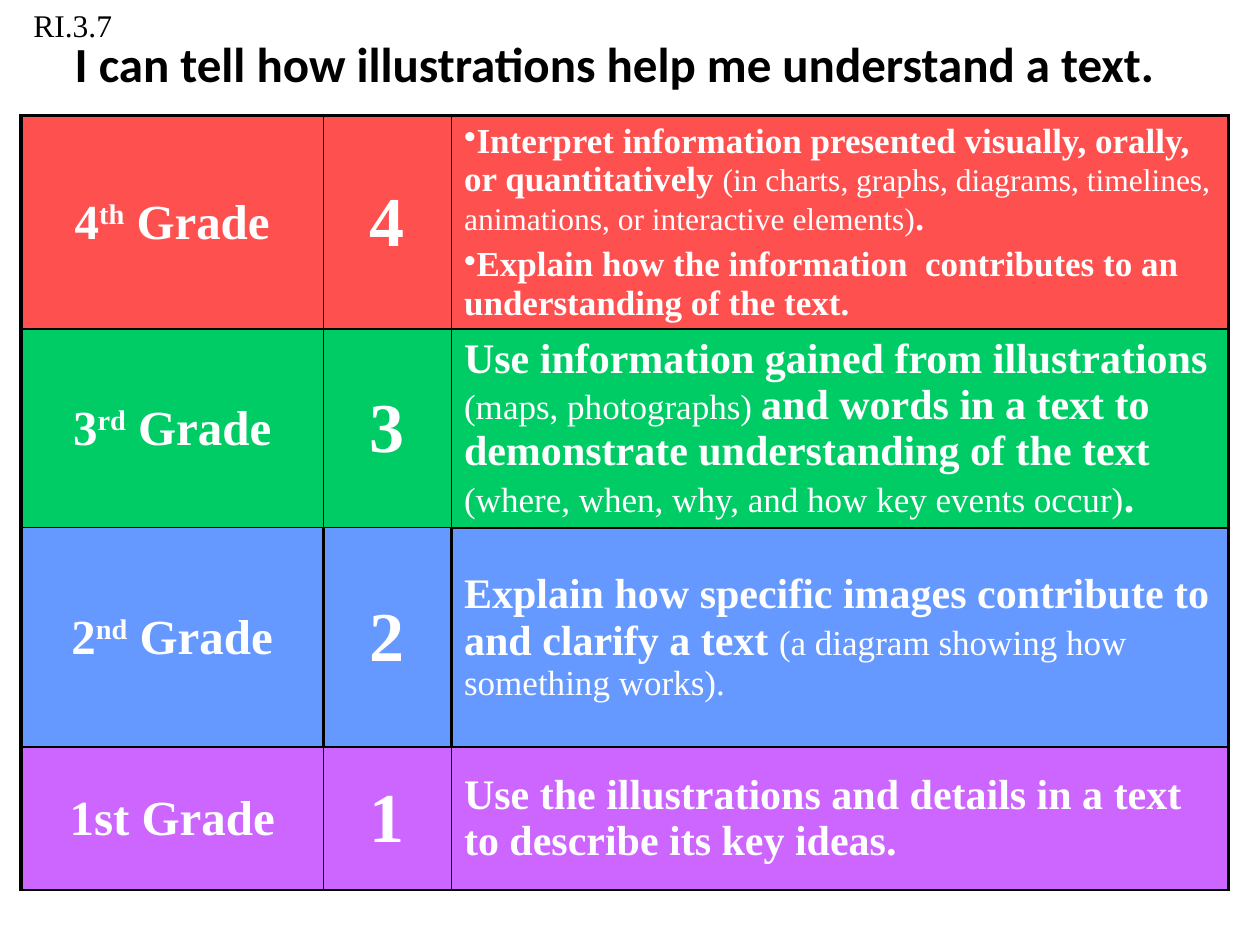
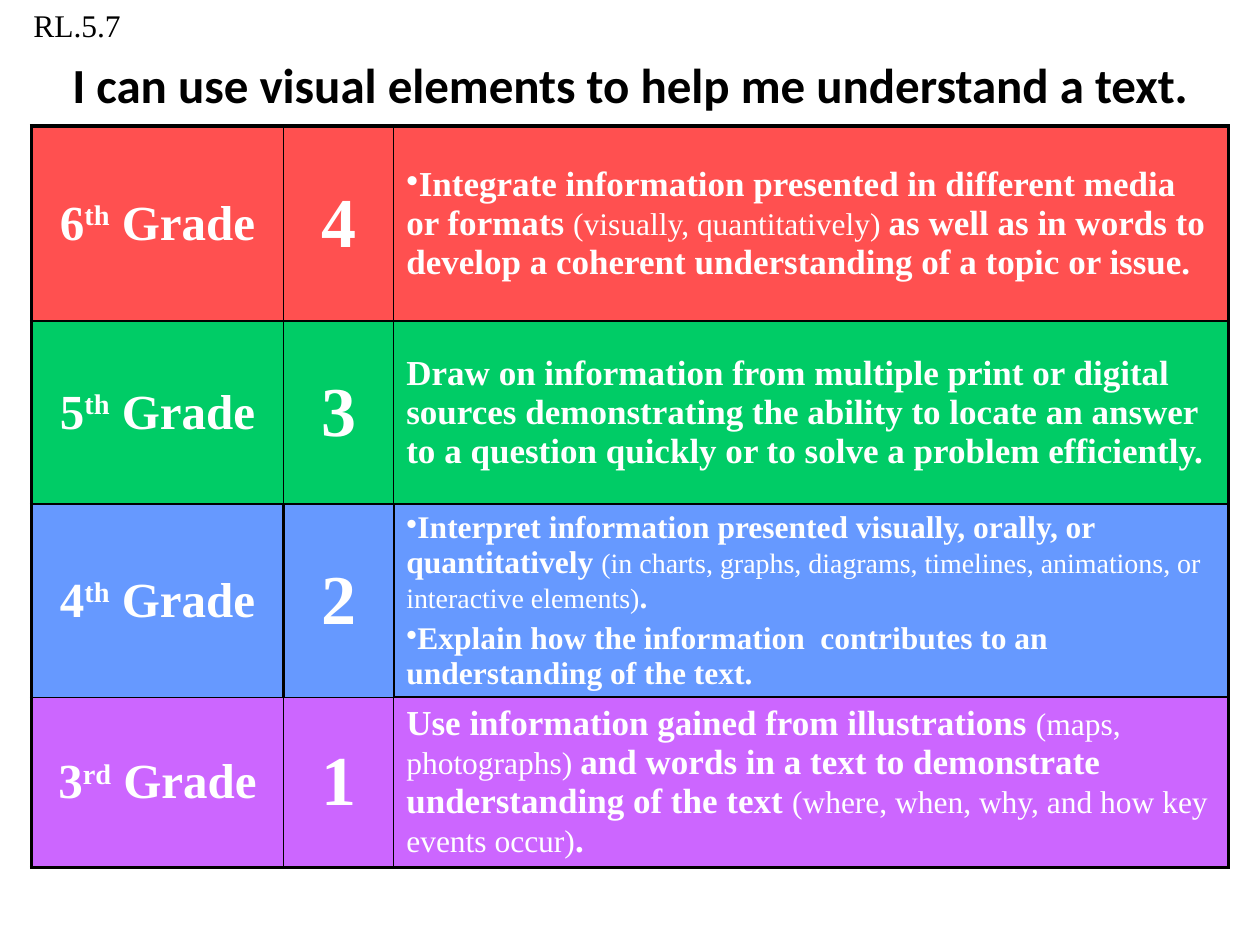
from lxml.etree import SubElement
from pptx import Presentation
from pptx.dml.color import RGBColor
from pptx.enum.text import MSO_ANCHOR as Anchor, MSO_AUTO_SIZE as AutoSize, PP_ALIGN as Align
from pptx.oxml.ns import qn
from pptx.util import Inches, Pt

LEVEL_FILLS = ["FF5050", "00CC66", "6699FF", "CC66FF"]
THIN, MEDIUM, THICK = 1, 1.5, 2.25
UPRIGHT_RULES = [
    [THICK, THIN, THIN, THICK],
    [THICK, THIN, THIN, THICK],
    [THICK, MEDIUM, MEDIUM, MEDIUM],
    [THICK, THIN, THIN, THICK],
]
LEVEL_RULES = [
    [THICK] * 3,
    [MEDIUM] * 3,
    [THIN, THIN, MEDIUM],
    [THIN, THIN, MEDIUM],
    [MEDIUM] * 3,
]

INTERPRET_AND_EXPLAIN = [
    ["Interpret information presented visually, orally, or quantitatively ",
     "(in charts, graphs, diagrams, timelines, animations, or interactive elements)", "."],
    ["Explain how the information  contributes to an understanding of the text."],
]
USE_ILLUSTRATIONS = [
    ["Use information gained from illustrations ", "(maps, photographs) ",
     "and words in a text to demonstrate understanding of the text ",
     "(where, when, why, and how key events occur)", "."],
]
EXPLAIN_IMAGES = [
    ["Explain how specific images contribute to and clarify a text ",
     "(a diagram showing how something works)."],
]
DESCRIBE_IDEAS = [["Use the illustrations and details in a text to describe its key ideas."]]
INTEGRATE_MEDIA = [
    ["Integrate information presented in different media or formats ",
     "(visually, quantitatively) ",
     "as well as in words to  develop a coherent understanding of a topic or issue."],
]
DRAW_ON_SOURCES = [
    ["Draw on information from multiple print or digital sources demonstrating the ability "
     "to locate an answer to a question quickly or to solve a problem efficiently."],
]


def color(code):
    return RGBColor.from_string(code)


def grid(units):
    return Inches(units / 12)


class ScaleDeck:
    serif, sans = "Times New Roman", "Calibri"
    ink, paper = "000000", "FFFFFF"

    def __init__(self):
        self.deck = Presentation()
        self.deck.slide_width, self.deck.slide_height = grid(120), grid(90)
        self.slide = None

    def start(self):
        self.slide = self.deck.slides.add_slide(self.deck.slide_layouts[5])

    def style(self, run, size, font, ink, bold=False):
        run.font.name, run.font.size, run.font.bold = font, Pt(size), bold
        run.font.color.rgb = color(ink)

    def goal(self, wording, top, width):
        title = self.slide.shapes.title
        title.left, title.top, title.width, title.height = map(grid, (2, top, width, 12))
        frame = title.text_frame
        frame.text = wording
        frame.word_wrap, frame.vertical_anchor = True, Anchor.MIDDLE
        frame.paragraphs[0].alignment = Align.CENTER
        self.style(frame.paragraphs[0].runs[0], 28, self.sans, self.ink, True)

    def standard(self, code):
        frame = self.slide.shapes.add_textbox(*map(grid, (2, 0, 17, 4.8))).text_frame
        frame.text = code
        frame.word_wrap, frame.auto_size = True, AutoSize.SHAPE_TO_FIT_TEXT
        self.style(frame.paragraphs[0].runs[0], 18, self.serif, self.ink)

    def phrase_line(self, paragraph, parts, bulleted=False, centred=False):
        paragraph.alignment = Align.CENTER if centred else Align.LEFT
        properties = paragraph._p.get_or_add_pPr()
        properties.set("marL", "0")
        properties.set("indent", "0")
        before = SubElement(properties, qn("a:spcBef"))
        SubElement(before, qn("a:spcPct"), val="20000")
        if bulleted:
            SubElement(properties, qn("a:buChar"), char="•")
        for wording, size, bold, raised in parts:
            run = paragraph.add_run()
            run.text = wording
            self.style(run, size, self.serif, self.paper, bold)
            if raised:
                run._r.get_or_add_rPr().set("baseline", "30000")

    def rule(self, cell, side, weight):
        line = SubElement(cell._tc.get_or_add_tcPr(), qn(f"a:ln{side}"), w=str(Pt(weight)))
        SubElement(SubElement(line, qn("a:solidFill")), qn("a:srgbClr"), val=self.ink)

    def frame_cell(self, cell, level, column):
        self.rule(cell, "L", UPRIGHT_RULES[level][column])
        self.rule(cell, "R", UPRIGHT_RULES[level][column + 1])
        self.rule(cell, "T", LEVEL_RULES[level][column])
        self.rule(cell, "B", LEVEL_RULES[level + 1][column])
        cell.fill.solid()
        cell.fill.fore_color.rgb = color(LEVEL_FILLS[level])
        cell.vertical_anchor = Anchor.MIDDLE

    def scale(self, left, top, widths, heights, levels):
        place = map(grid, (left, top, sum(widths), sum(heights)))
        table = self.slide.shapes.add_table(len(levels), len(widths), *place).table
        table.first_row = table.horz_banding = False
        for column, width in zip(table.columns, widths):
            column.width = grid(width)
        for row, height in zip(table.rows, heights):
            row.height = grid(height)
        for level, (number, suffix, skills, sizes, bulleted) in enumerate(levels):
            cells = [table.cell(level, column) for column in range(len(widths))]
            for column, cell in enumerate(cells):
                self.frame_cell(cell, level, column)
            grade, score, skill = [cell.text_frame for cell in cells]
            if suffix:
                name = [(number, 28, True, False), (suffix, 28, True, True),
                        (" Grade", 28, True, False)]
            else:
                name = [(f"{number} Grade", 28, True, False)]
            self.phrase_line(grade.paragraphs[0], name, centred=True)
            points = str(len(levels) - level)
            self.phrase_line(score.paragraphs[0], [(points, 40, True, False)], centred=True)
            for order, phrases in enumerate(skills):
                paragraph = skill.add_paragraph() if order else skill.paragraphs[0]
                parts = [(phrase, sizes[i % 2], i % 2 == 0, False)
                         for i, phrase in enumerate(phrases)]
                self.phrase_line(paragraph, parts, bulleted)


def main():
    scales = ScaleDeck()

    scales.start()
    scales.goal("I can tell how illustrations help me understand a text.", 0, 113)
    scales.scale(2, 11, [28.8, 12.2, 74], [17.6, 16, 20.9, 13.6], [
        ("4", "th", INTERPRET_AND_EXPLAIN, (20, 18), True),
        ("3", "rd", USE_ILLUSTRATIONS, (24, 20), False),
        ("2", "nd", EXPLAIN_IMAGES, (24, 20), False),
        ("1st", "", DESCRIBE_IDEAS, (24, 20), False),
    ])
    scales.standard("RI.3.7")

    scales.start()
    scales.goal("I can use visual elements to help me understand a text.", 2, 116)
    scales.scale(3, 12, [24, 10.5, 79.5], [18.6, 17.4, 17.9, 16.2], [
        ("6", "th", INTEGRATE_MEDIA, (20, 18), True),
        ("5", "th", DRAW_ON_SOURCES, (20, 18), False),
        ("4", "th", INTERPRET_AND_EXPLAIN, (18, 16), True),
        ("3", "rd", USE_ILLUSTRATIONS, (20, 18), False),
    ])
    scales.standard("RL.5.7")

    scales.deck.save("out.pptx")


if __name__ == "__main__":
    main()
